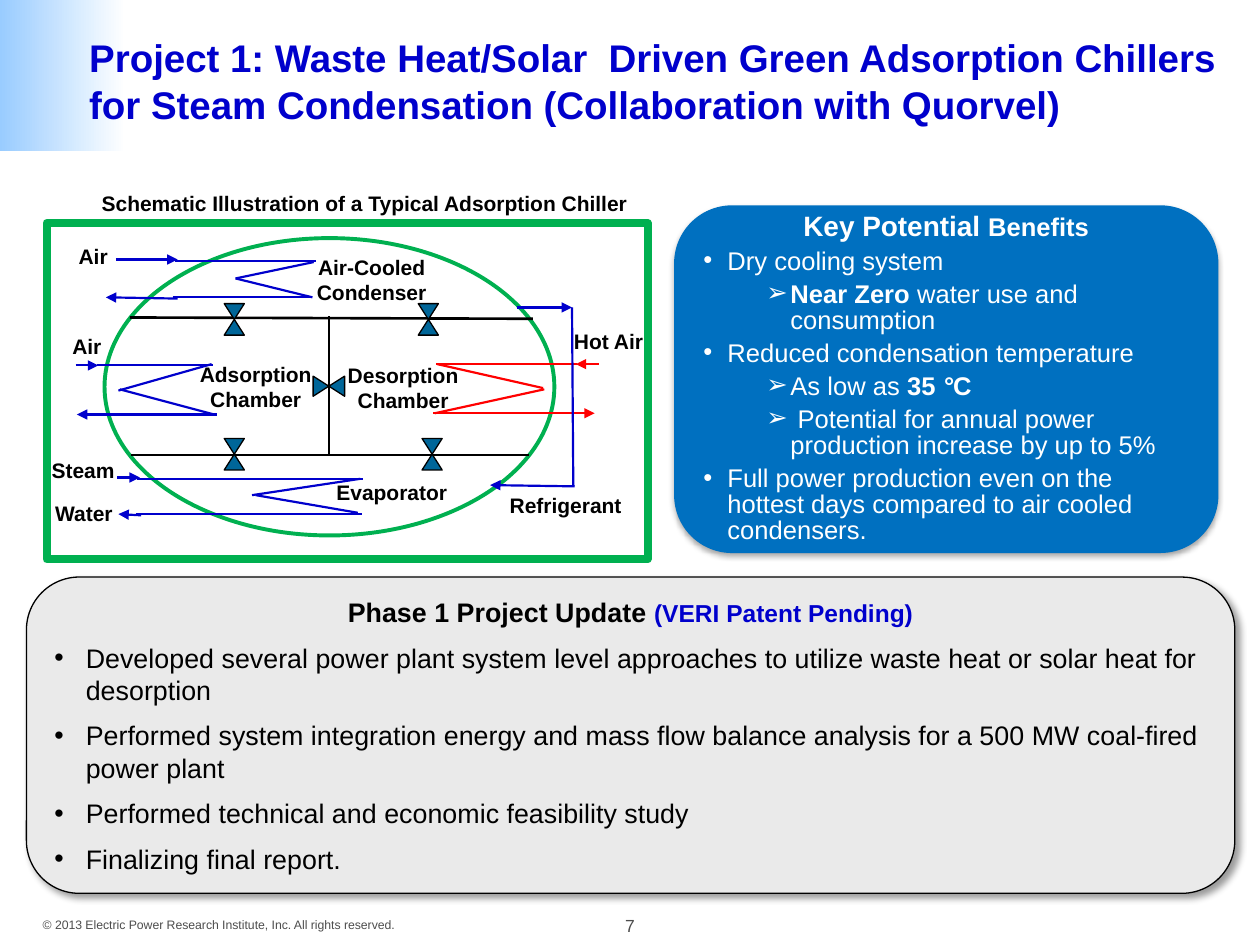
"""Build the adsorption chiller project slide."""
from lxml.etree import SubElement
from pptx import Presentation
from pptx.dml.color import RGBColor
from pptx.enum.shapes import MSO_CONNECTOR as Link, MSO_SHAPE as Shape
from pptx.enum.text import MSO_ANCHOR as Anchor, PP_ALIGN as Align
from pptx.oxml.ns import qn
from pptx.util import Inches, Pt

COLORS = {
    "black": "000000", "white": "FFFFFF", "gray": "4D4D4D", "panel": "EAEAEA",
    "sky": "99CCFF", "benefit": "0070C0", "blue": "0000CC", "red": "FF0000",
    "green": "00B050", "valve": "006699",
}
RGB = {name: RGBColor.from_string(value) for name, value in COLORS.items()}

deck = Presentation()
deck.slide_width, deck.slide_height = Inches(10), Inches(7.5)
page = deck.slides.add_slide(deck.slide_layouts[6])


def add_box(place, kind=None, fill=None, line=None, width=0.75):
    place = [Inches(value) for value in place]
    if kind is None:
        box = page.shapes.add_textbox(*place)
        box.text_frame.word_wrap = True
        return box
    box = page.shapes.add_shape(kind, *place)
    box.shadow.inherit = False
    if fill:
        box.fill.solid()
        box.fill.fore_color.rgb = RGB[fill]
    else:
        box.fill.background()
    if line:
        box.line.color.rgb = RGB[line]
        box.line.width = Pt(width)
    else:
        box.line.fill.background()
    return box


def write(box, paragraphs, anchor=Anchor.TOP):
    frame = box.text_frame
    frame.vertical_anchor = anchor
    for index, (spans, layout) in enumerate(paragraphs):
        para = frame.paragraphs[0] if index == 0 else frame.add_paragraph()
        layout = {"alignment": Align.LEFT, **layout}
        bullet = layout.pop("bullet", None)
        margin, indent = layout.pop("indent", (0, 0))
        for name, value in layout.items():
            setattr(para, name, value)
        if bullet:
            props = para._p.get_or_add_pPr()
            props.set("marL", str(Inches(margin)))
            props.set("indent", str(Inches(indent)))
            SubElement(props, qn("a:buFont"), typeface="Arial")
            SubElement(props, qn("a:buChar"), char=bullet)
        for text, size, color, bold, *italic in spans:
            span = para.add_run()
            span.text = text
            style = {"name": "Arial", "size": Pt(size), "bold": bold, "italic": bool(italic)}
            for name, value in style.items():
                setattr(span.font, name, value)
            span.font.color.rgb = RGB[color]


band = add_box((0, 0, 1, 1.2), Shape.RECTANGLE, "sky")
band.fill.gradient()
band.fill.gradient_angle = 180
for stop, color in zip(band.fill.gradient_stops, ("white", "sky")):
    stop.color.rgb = RGB[color]

centered = {"alignment": Align.CENTER}
write(add_box((4.67, 7.21, 0.66, 0.27)), [([("7", 10, "gray", False)], centered)])
notice = add_box((0.24, 7.23, 3.02, 0.22))
notice.text_frame.word_wrap = False
write(notice, [([("© 2013 Electric Power Research Institute, Inc. All rights reserved.",
                  7, "gray", False)], {})])

benefits = add_box((5.35, 1.63, 4.32, 2.76), Shape.ROUNDED_RECTANGLE, "benefit")
update = add_box((0.21, 4.58, 9.59, 2.51), Shape.ROUNDED_RECTANGLE, "panel", "black")
for panel, blur, distance, angle, alpha in ((benefits, 3.1, 1.8, 90, 35), (update, 4, 3, 45, 40)):
    effects = panel._element.spPr.find(qn("a:effectLst"))
    shadow = SubElement(effects, qn("a:outerShdw"), blurRad=str(Pt(blur)), dist=str(Pt(distance)),
                        dir=str(angle * 60000), algn="ctr", rotWithShape="0")
    tint = SubElement(shadow, qn("a:srgbClr"), val=COLORS["black"])
    SubElement(tint, qn("a:alpha"), val=str(alpha * 1000))

tight = {"line_spacing": 0.85, "space_after": Pt(4)}
point = {**tight, "bullet": "•", "indent": (0.19, -0.19)}
detail = {**tight, "bullet": "➢", "indent": (0.69, -0.19)}
body = (14.6, "white", False)
strong = (14.6, "white", True)
write(benefits, [
    ([("Key Potential ", 16, "white", True), ("Benefits", *strong)], {**tight, **centered}),
    ([("Dry cooling system", *body)], point),
    ([("Near Zero ", *strong), ("water use and consumption", *body)], detail),
    ([("Reduced condensation temperature", *body)], point),
    ([("As low as ", *body), ("35 ", *strong), ("°", *strong, True), ("C", *strong)], detail),
    ([(" Potential for annual power production increase by up to 5%", *body)], detail),
    ([("Full power production even on the hottest days compared to air cooled condensers.",
       *body)], point),
], Anchor.MIDDLE)

write(add_box((0.61, 0.14, 9.39, 1)), [([(
    "Project 1: Waste Heat/Solar  Driven Green Adsorption Chillers for Steam Condensation "
    "(Collaboration with Quorvel)", 22, "blue", True)], {})], Anchor.MIDDLE)

updates = [
    "Developed several power plant system level approaches to utilize waste heat or solar heat "
    "for desorption",
    "Performed system integration energy and mass flow balance analysis for a 500 MW coal-fired "
    "power plant",
    "Performed technical and economic feasibility study",
    "Finalizing final report.",
]
item = {"space_before": Pt(7.65), "bullet": "•", "indent": (0.25, -0.25)}
heading = [("Phase 1 Project Update ", 15.3, "black", True),
           ("(VERI Patent Pending)", 14, "blue", True)]
write(update, [(heading, centered)]
      + [([(text, 15.3, "black", False)], item) for text in updates], Anchor.MIDDLE)

add_box((0.83, 1.89, 3.57, 2.36), Shape.OVAL, line="green", width=2.25)

walls = [(1.03, 2.52, 4.23, 2.53), (1.04, 3.61, 4.2, 3.61), (2.61, 2.51, 2.61, 3.61)]
adsorption = [
    (0.6, 2.9, 0.78, 2.9, "tailEnd"), (0.77, 2.9, 1.69, 2.9), (0.75, 3.29, 1.72, 3.29),
    (0.94, 3.1, 1.68, 2.89), (0.95, 3.09, 1.7, 3.29), (0.61, 3.29, 0.79, 3.29, "headEnd"),
]
desorption = [
    (4.55, 3.28, 4.72, 3.28, "tailEnd"), (3.46, 2.89, 4.58, 2.89), (3.44, 3.28, 4.56, 3.28),
    (3.47, 2.89, 4.31, 3.08), (3.45, 3.28, 4.32, 3.09), (4.57, 2.89, 4.75, 2.89, "headEnd"),
]
evaporator = [
    (0.93, 3.79, 1.11, 3.79, "tailEnd"), (1.08, 4.08, 2.87, 4.08), (2, 3.93, 2.86, 3.8),
    (2.03, 3.93, 2.84, 4.07), (0.94, 4.08, 1.12, 4.09, "headEnd"), (1.09, 3.8, 2.88, 3.8),
]
condenser = [
    (0.92, 2.06, 1.41, 2.06, "tailEnd"), (1.39, 2.07, 2.51, 2.07), (1.37, 2.36, 2.48, 2.36),
    (1.87, 2.21, 2.49, 2.08), (1.87, 2.21, 2.48, 2.36), (0.84, 2.36, 1.41, 2.37, "headEnd"),
]
refrigerant = [
    (4.1, 2.44, 4.54, 2.44, "tailEnd"), (4.54, 2.44, 4.55, 3.86),
    (3.89, 3.85, 4.56, 3.86, "headEnd"),
]
circuits = [(walls, "black", 1.5), (adsorption, "blue", 1.25), (desorption, "red", 1.25),
            (evaporator, "blue", 1.25), (condenser, "blue", 1.25), (refrigerant, "blue", 1.25)]
for lines, color, width in circuits:
    for *ends, arrow in [(*line, None) if len(line) == 4 else line for line in lines]:
        pipe = page.shapes.add_connector(Link.STRAIGHT, *[Inches(value) for value in ends])
        pipe.line.color.rgb = RGB[color]
        pipe.line.width = Pt(width)
        if arrow:
            SubElement(pipe.line._get_or_add_ln(), qn(f"a:{arrow}"), type="triangle")
        SubElement(pipe._element.spPr, qn("a:effectLst"))
    if lines is walls:
        for left, top, turn in ((3.32, 2.41, 0), (1.78, 2.41, 0), (1.78, 3.48, 0),
                                (3.35, 3.48, 0), (2.53, 2.94, 270)):
            valve = add_box((left, top, 0.16, 0.25), Shape.FLOWCHART_COLLATE, "valve", "black")
            valve.rotation = turn

labels = [
    ("Hot Air", 4.05, 2.56, 1.56, 0.3), ("Air-Cooled Condenser", 2.17, 1.97, 1.56, 0.5),
    ("Desorption Chamber", 2.42, 2.83, 1.56, 0.5), ("Adsorption Chamber", 1.38, 2.82, 1.3, 0.5),
    ("Evaporator", 2.33, 3.76, 1.56, 0.3),
    ("Schematic Illustration of a Typical Adsorption Chiller", 0.67, 1.46, 4.45, 0.3),
    ("Steam", -0.12, 3.58, 1.56, 0.3), ("Water ", -0.09, 3.92, 1.56, 0.3),
    ("Air", 0.31, 2.6, 0.76, 0.3), ("Air", -0.04, 1.88, 1.56, 0.3),
    ("Refrigerant", 3.71, 3.86, 1.56, 0.3),
]
for text, *place in labels:
    write(add_box(place), [([(text, 12, "black", True)], centered)])

add_box((0.37, 1.77, 4.77, 2.67), Shape.RECTANGLE, line="green", width=4.5)

deck.save("out.pptx")
